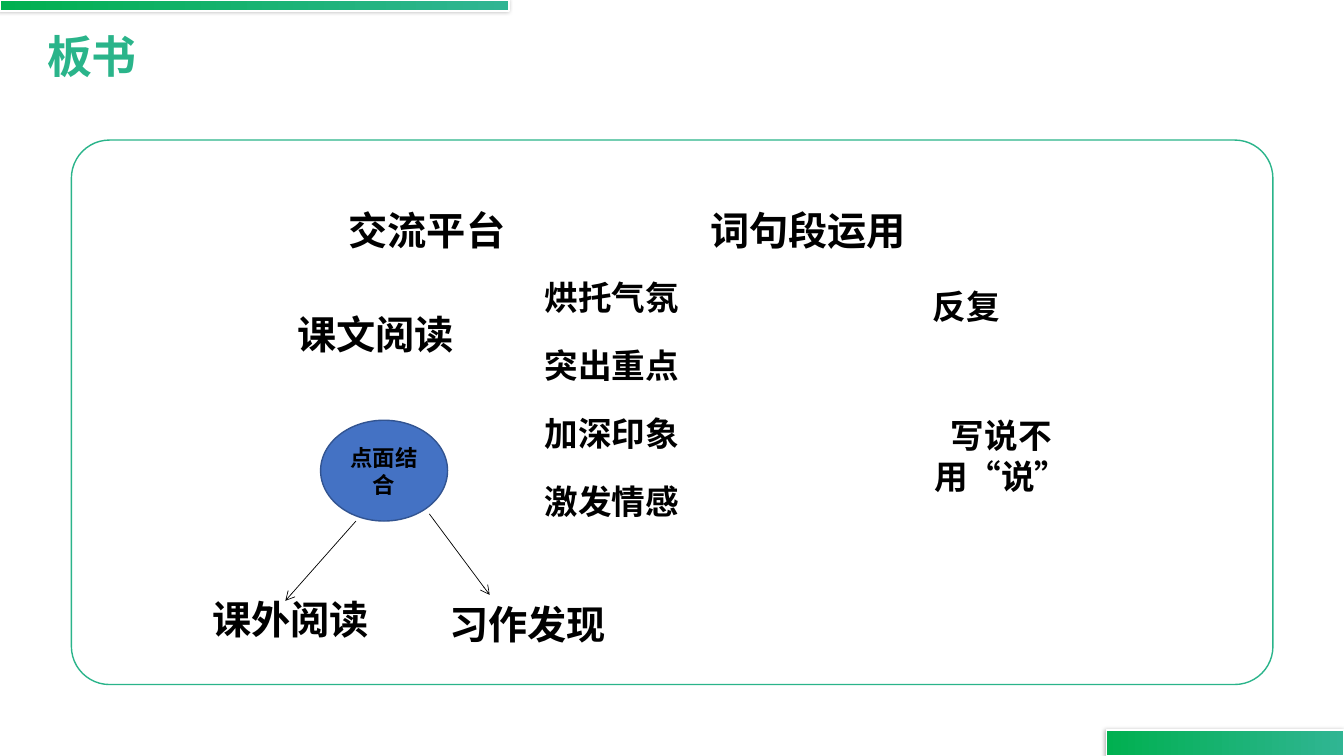
from lxml.etree import SubElement
from pptx import Presentation
from pptx.dml.color import RGBColor
from pptx.enum.shapes import MSO_CONNECTOR, MSO_SHAPE
from pptx.enum.text import MSO_ANCHOR, MSO_AUTO_SIZE, PP_ALIGN
from pptx.oxml.ns import qn
from pptx.util import Cm, Pt

GREEN, BLACK = "2AB48A", "000000"


def rgb(hex_color):
    return RGBColor.from_string(hex_color)


def write(shape, text, size, color=BLACK, align=PP_ALIGN.CENTER):
    """Put one bold paragraph into the shape and return it."""
    p = shape.text_frame.paragraphs[0]
    p.text = text
    p.alignment = align
    p.font.name, p.font.size, p.font.bold = "Arial", Pt(size), True
    p.font.color.rgb = rgb(color)
    return p


prs = Presentation()
prs.slide_width, prs.slide_height = Cm(33.87), Cm(19.05)
s = prs.slides.add_slide(prs.slide_layouts[6])

# Gradient bars in the corners
for left, top, width, height in [(0, 0, 12.83, 0.28), (27.88, 18.4, 5.99, 0.65)]:
    bar = s.shapes.add_shape(MSO_SHAPE.RECTANGLE, Cm(left), Cm(top), Cm(width), Cm(height))
    bar.fill.gradient()
    bar.fill.gradient_angle = 0
    for stop, color in zip(bar.fill.gradient_stops, ("00B050", "30B593")):
        stop.color.rgb = rgb(color)
    bar.line.color.rgb = rgb("FFFFFF")
    bar.line.width = Pt(1)
    bar.shadow.inherit = False
    effects = bar._element.spPr.find(qn("a:effectLst"))
    shadow = SubElement(effects, qn("a:outerShdw"), blurRad=str(Pt(3)), dist=str(Pt(1)),
                        dir="10800000", algn="ctr", rotWithShape="0")
    shade = SubElement(shadow, qn("a:srgbClr"), val=BLACK)
    SubElement(shade, qn("a:alpha"), val="30000")

# Board frame
frame = s.shapes.add_shape(MSO_SHAPE.ROUNDED_RECTANGLE, Cm(1.8), Cm(3.53), Cm(30.28), Cm(13.72))
frame.adjustments[0] = 0.07
frame.fill.background()
frame.line.color.rgb = rgb(GREEN)
frame.line.width = Pt(1)
frame.shadow.inherit = False

# Title
title = s.shapes.add_textbox(Cm(0.94), Cm(0.74), Cm(7.67), Cm(1.4))
title.text_frame.word_wrap = True
p = write(title, "板书", 32, GREEN, PP_ALIGN.LEFT)
p.line_spacing = 0.9
p.space_before = Pt(10)

# Centre with arrows to the two lower headings
hub = s.shapes.add_shape(MSO_SHAPE.OVAL, Cm(8.08), Cm(10.59), Cm(3.2), Cm(2.54))
hub.fill.solid()
hub.fill.fore_color.rgb = rgb("4472C4")
hub.line.color.rgb = rgb("325491")
hub.line.width = Pt(1)
hub.shadow.inherit = False
hub.text_frame.word_wrap = True
hub.text_frame.vertical_anchor = MSO_ANCHOR.MIDDLE
write(hub, "点面结合", 16)

for x1, y1, x2, y2 in [(8.97, 13.13, 7.19, 15.14), (10.82, 12.95, 12.34, 14.99)]:
    arrow = s.shapes.add_connector(MSO_CONNECTOR.STRAIGHT, Cm(x1), Cm(y1), Cm(x2), Cm(y2))
    arrow.line.color.rgb = rgb(BLACK)
    arrow.line.width = Pt(0.5)
    SubElement(arrow.line._get_or_add_ln(), qn("a:tailEnd"), type="arrow")
    SubElement(arrow._element.spPr, qn("a:effectLst"))

# Headings and notes: text, left, top, width, height, size
labels = [
    ("交流平台", 8.46, 5.08, 4.6, 1.45, 28),
    ("词句段运用", 17.55, 5.08, 5.64, 1.45, 28),
    ("课文阅读", 7.16, 7.7, 4.6, 1.45, 28),
    ("课外阅读", 5.03, 14.88, 4.6, 1.45, 28),
    ("习作发现", 10.31, 14.99, 5.97, 1.45, 28),
    ("反复", 23.22, 7.09, 2.26, 1.27, 24),
    ("写说不\v用“说”", 22.35, 10.34, 5.77, 1.27, 24),
]
for i, effect in enumerate(["烘托气氛", "突出重点", "加深印象", "激发情感"]):
    labels.append((effect, 13.41, 6.86 + 1.71 * i, 4.01, 1.27, 24))

for text, left, top, width, height, size in labels:
    label = s.shapes.add_textbox(Cm(left), Cm(top), Cm(width), Cm(height))
    label.text_frame.word_wrap = False
    label.text_frame.auto_size = MSO_AUTO_SIZE.SHAPE_TO_FIT_TEXT
    write(label, text, size)

prs.save("out.pptx")
